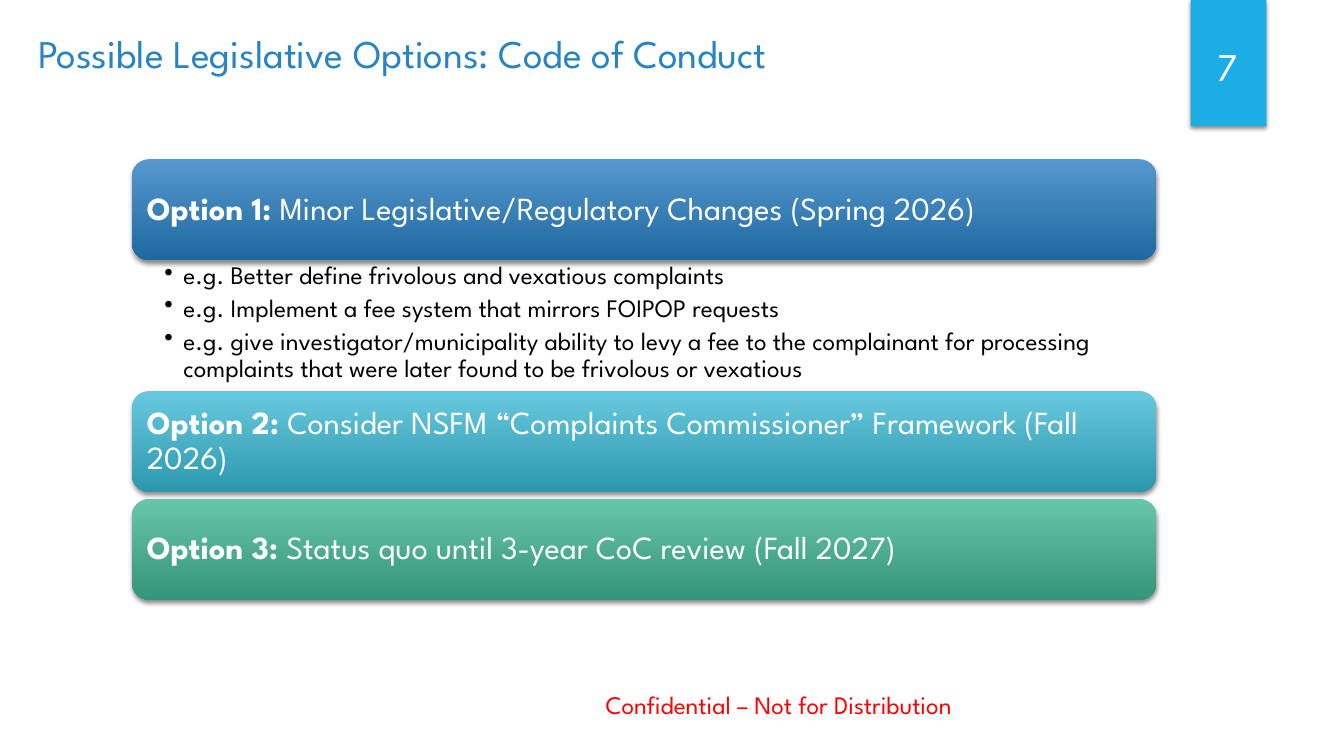
from lxml import etree
from pptx import Presentation
from pptx.dml.color import RGBColor
from pptx.enum.shapes import MSO_SHAPE
from pptx.enum.text import MSO_ANCHOR, PP_ALIGN
from pptx.oxml import parse_xml
from pptx.oxml.ns import nsdecls, qn
from pptx.util import Inches, Pt

FONT = "League Spartan"
WHITE = RGBColor(0xFF, 0xFF, 0xFF)
BLACK = RGBColor(0x00, 0x00, 0x00)
RED = RGBColor(0xFF, 0x00, 0x00)
BLUE = RGBColor(0x26, 0x83, 0xC6)
CYAN = RGBColor(0x1C, 0xAD, 0xE4)

OPTIONS = [
    (1.58, "Option 1:", " Minor Legislative/Regulatory Changes (Spring 2026)",
     RGBColor(0x55, 0x98, 0xCF), RGBColor(0x1E, 0x69, 0x9F)),
    (3.88, "Option 2:", " Consider NSFM “Complaints Commissioner” Framework (Fall 2026)",
     RGBColor(0x68, 0xC9, 0xDE), RGBColor(0x2C, 0x98, 0xAE)),
    (4.95, "Option 3:", " Status quo until 3-year CoC review (Fall 2027)",
     RGBColor(0x68, 0xC6, 0xA9), RGBColor(0x35, 0x95, 0x79)),
]
POINTS = [
    "e.g. Better define frivolous and vexatious complaints",
    "e.g. Implement a fee system that mirrors FOIPOP requests",
    "e.g. give investigator/municipality ability to levy a fee to the complainant "
    "for processing complaints that were later found to be frivolous or vexatious",
]
SHADOW = (
    f'<a:outerShdw {nsdecls("a")} blurRad="38100" dist="25400" dir="5400000" '
    'algn="ctr" rotWithShape="0"><a:srgbClr val="000000">'
    '<a:alpha val="45000"/></a:srgbClr></a:outerShdw>'
)

deck = Presentation()
deck.slide_width = Inches(13.33)
deck.slide_height = Inches(7.5)
slide = deck.slides.add_slide(deck.slide_layouts[6])


def add_block(kind, left, top, width, height):
    block = slide.shapes.add_shape(
        kind, Inches(left), Inches(top), Inches(width), Inches(height))
    block.shadow.inherit = False
    block._element.spPr.find(qn("a:effectLst")).append(parse_xml(SHADOW))
    block.line.fill.background()
    return block


def add_text(lines, left, top, width, height, size, color, anchor=MSO_ANCHOR.TOP):
    box = slide.shapes.add_textbox(
        Inches(left), Inches(top), Inches(width), Inches(height))
    frame = box.text_frame
    frame.word_wrap = True
    frame.vertical_anchor = anchor
    frame.text = "\n".join(lines)
    for para in frame.paragraphs:
        para.font.name = FONT
        para.font.size = Pt(size)
        para.font.color.rgb = color
    return frame


tab = add_block(MSO_SHAPE.RECTANGLE, 11.81, 0, 0.75, 1.25)
tab.fill.solid()
tab.fill.fore_color.rgb = CYAN
page = add_text(["7"], 11.55, 0.49, 1.26, 0.45, 28, WHITE, MSO_ANCHOR.BOTTOM)
page.paragraphs[0].alignment = PP_ALIGN.CENTER

add_text(["Possible Legislative Options: Code of Conduct"],
         0.28, 0.1, 11.59, 0.84, 28, BLUE, MSO_ANCHOR.MIDDLE)
add_text(["Confidential – Not for Distribution"], 5.91, 6.79, 5.96, 0.4, 18, RED)

for top, label, detail, light, dark in OPTIONS:
    bar = add_block(MSO_SHAPE.ROUNDED_RECTANGLE, 1.31, top, 10.16, 1)
    bar.fill.gradient()
    bar.fill.gradient_angle = 270
    for stop, color in zip(bar.fill.gradient_stops, (light, dark)):
        stop.color.rgb = color
    frame = bar.text_frame
    frame.word_wrap = True
    frame.vertical_anchor = MSO_ANCHOR.MIDDLE
    frame.margin_left = frame.margin_right = Inches(0.1)
    frame.margin_top = frame.margin_bottom = Inches(0.1)
    para = frame.paragraphs[0]
    para.alignment = PP_ALIGN.LEFT
    para.line_spacing = 0.9
    for words, bold in ((label, True), (detail, False)):
        run = para.add_run()
        run.text = words
        run.font.bold = bold
    para.font.name = FONT
    para.font.size = Pt(23)
    para.font.color.rgb = WHITE

notes = add_text(POINTS, 1.31, 2.58, 10.16, 1.3, 18, BLACK)
notes.margin_left = Inches(0.32)
notes.margin_right = Inches(0.18)
notes.margin_top = notes.margin_bottom = Inches(0.03)
for para in notes.paragraphs:
    para.line_spacing = 0.9
    para.space_after = Pt(4)
    props = para._p.get_or_add_pPr()
    props.set("marL", str(Inches(0.19)))
    props.set("indent", str(-Inches(0.19)))
    mark = etree.Element(qn("a:buChar"), char="•")
    props.find(qn("a:defRPr")).addprevious(mark)

deck.save("out.pptx")
